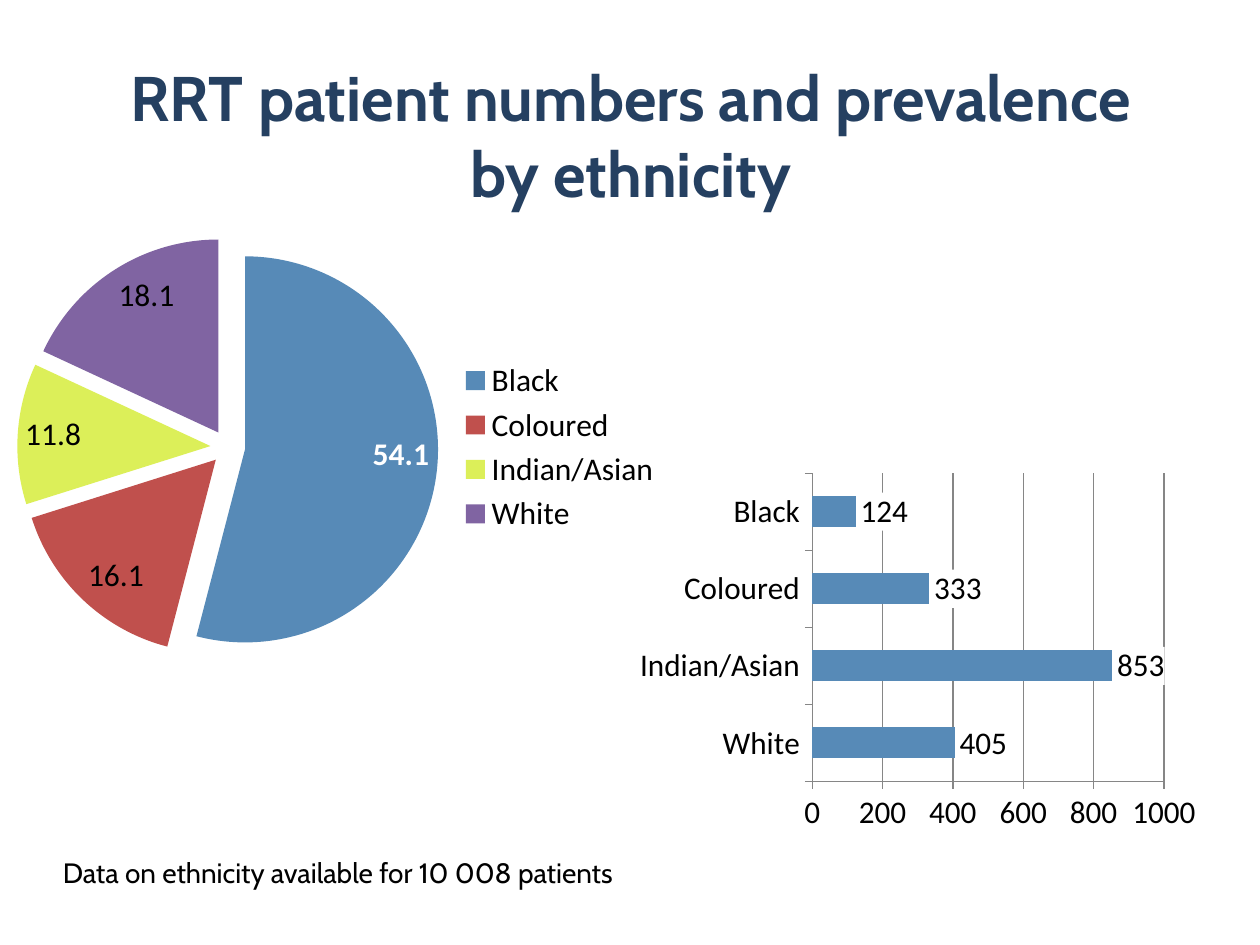
from dataclasses import dataclass

from lxml import etree
from pptx import Presentation
from pptx import util as u
from pptx.chart.data import CategoryChartData
from pptx.dml.color import RGBColor
from pptx.enum import chart as ch, text
from pptx.oxml import parse_xml
from pptx.oxml.ns import nsdecls


@dataclass(frozen=True)
class Theme:
    heading: str = "254061"
    ink: str = "000000"
    paper: str = "FFFFFF"
    grid: str = "868686"
    groups: tuple = ("578AB7", "C0504D", "DCEF59", "8064A2")
    text_font: str = "Cabin"
    chart_font: str = "Calibri"
    title_size: int = 36
    note_size: int = 16
    chart_size: int = 18


def rgb(code):
    return RGBColor.from_string(code)


class EthnicitySlide:
    def __init__(self, deck, theme):
        self.theme = theme
        self.slide = deck.slides.add_slide(deck.slide_layouts[5])

    def style_font(self, font, name, size, color, bold=False):
        font.name = name
        font.size = u.Pt(size)
        font.color.rgb = rgb(color)
        font.bold = bold

    def title(self, box, wording):
        heading = self.slide.shapes.title
        heading.left, heading.top, heading.width, heading.height = map(u.Inches, box)
        heading.text_frame.text = wording
        heading.text_frame.vertical_anchor = text.MSO_ANCHOR.MIDDLE
        line = heading.text_frame.paragraphs[0]
        line.alignment = text.PP_ALIGN.CENTER
        self.style_font(line.runs[0].font, self.theme.text_font,
                        self.theme.title_size, self.theme.heading, True)

    def note(self, box, wording):
        frame = self.slide.shapes.add_textbox(*map(u.Inches, box)).text_frame
        frame.word_wrap = True
        frame.auto_size = text.MSO_AUTO_SIZE.SHAPE_TO_FIT_TEXT
        frame.text = wording
        self.style_font(frame.paragraphs[0].runs[0].font, self.theme.text_font,
                        self.theme.note_size, self.theme.ink)

    def chart(self, kind, box, groups, values):
        data = CategoryChartData()
        data.categories = groups
        data.add_series("Series 1", values)
        chart = self.slide.shapes.add_chart(kind, *map(u.Inches, box), data).chart
        self.style_font(chart.font, self.theme.chart_font,
                        self.theme.chart_size, self.theme.ink)
        chart.has_title = False
        return chart

    def pie(self, box, groups, shares):
        chart = self.chart(ch.XL_CHART_TYPE.PIE, box, groups, shares)
        chart.has_legend = True
        chart.legend.position = ch.XL_LEGEND_POSITION.RIGHT
        chart.legend.include_in_layout = False
        series = chart.plots[0].series[0]
        explosion = parse_xml(f'<c:explosion {nsdecls("c")} val="9"/>')
        series._element.find("{*}tx").addnext(explosion)
        for index, color in enumerate(self.theme.groups):
            fill = series.points[index].format.fill
            fill.solid()
            fill.fore_color.rgb = rgb(color)
        labels = series.data_labels
        labels.show_value = True
        labels.show_percentage = False
        labels.position = ch.XL_LABEL_POSITION.INSIDE_END
        largest = series.points[0].data_label
        self.style_font(largest.font, self.theme.chart_font,
                        self.theme.chart_size, self.theme.paper, True)
        largest.position = ch.XL_LABEL_POSITION.INSIDE_END

    def bars(self, box, groups, rates, plot_area):
        chart = self.chart(ch.XL_CHART_TYPE.BAR_CLUSTERED, box, groups, rates)
        chart.has_legend = False
        plot = chart.plots[0]
        plot.gap_width = 150
        plot.vary_by_categories = False
        fill = plot.series[0].format.fill
        fill.solid()
        fill.fore_color.rgb = rgb(self.theme.groups[0])
        labels = plot.series[0].data_labels
        labels.show_value = True
        labels.number_format = "0"
        labels.number_format_is_linked = False
        labels.position = ch.XL_LABEL_POSITION.OUTSIDE_END
        label_fill = parse_xml(
            f'<c:spPr {nsdecls("c", "a")}><a:solidFill>'
            f'<a:srgbClr val="{self.theme.paper}"/></a:solidFill></c:spPr>')
        labels._element.find("{*}numFmt").addnext(label_fill)
        rate_axis = chart.value_axis
        rate_axis.minimum_scale, rate_axis.maximum_scale = 0, 1000
        rate_axis.major_unit = 200
        rate_axis.has_major_gridlines = True
        rate_axis.tick_labels.number_format = "0"
        rate_axis.tick_labels.number_format_is_linked = False
        for axis in (chart.category_axis, rate_axis):
            axis.major_tick_mark = ch.XL_TICK_MARK.OUTSIDE
            axis.format.line.color.rgb = rgb(self.theme.grid)
        rate_axis.major_gridlines.format.line.color.rgb = rgb(self.theme.grid)
        self.place_plot(chart, plot_area)

    def place_plot(self, chart, plot_area):
        area = chart._chartSpace.chart.plotArea
        for old in area.findall("{*}layout"):
            area.remove(old)
        layout = parse_xml(f'<c:layout {nsdecls("c")}><c:manualLayout/></c:layout>')
        settings = [("layoutTarget", "inner"), ("xMode", "edge"), ("yMode", "edge")]
        settings += zip("xywh", plot_area)
        for tag, value in settings:
            name = f"{{{layout.nsmap['c']}}}{tag}"
            etree.SubElement(layout[0], name).set("val", str(value))
        area.insert(0, layout)


def main():
    deck = Presentation()
    deck.slide_width, deck.slide_height = u.Inches(10), u.Inches(7.5)
    page = EthnicitySlide(deck, Theme())
    groups = ["Black", "Coloured", "Indian/Asian", "White"]
    page.title((0.83, 0.44, 8.35, 1.25),
               "RRT patient numbers and prevalence by ethnicity")
    page.pie((0, 1.66, 5.35, 3.78), groups, [54.1, 16.1, 11.8, 18.1])
    page.note((0.4, 6.74, 8.01, 0.37),
              "Data on ethnicity available for 10 008 patients")
    page.bars((5.08, 3.75, 4.41, 2.99), groups[::-1], [405, 853, 333, 124],
              (0.31, 0, 0.64, 0.82))
    deck.save("out.pptx")


if __name__ == "__main__":
    main()
